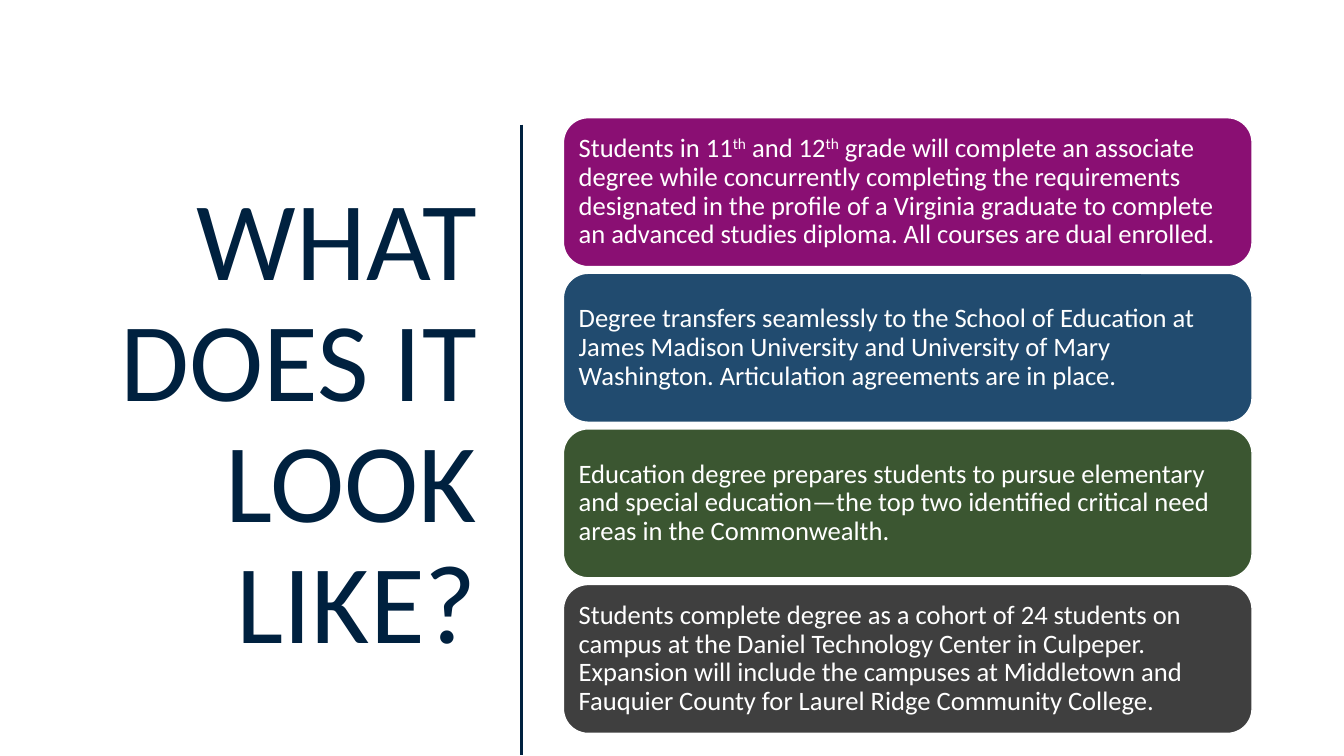
from dataclasses import dataclass

from lxml import etree
from pptx import Presentation
from pptx.dml.color import RGBColor
from pptx.enum.shapes import MSO_CONNECTOR, MSO_SHAPE
from pptx.enum.text import MSO_ANCHOR, PP_ALIGN
from pptx.oxml.ns import qn
from pptx.util import Inches, Pt

STRAIGHT = MSO_CONNECTOR.STRAIGHT
ROUNDED = MSO_SHAPE.ROUNDED_RECTANGLE
MIDDLE = MSO_ANCHOR.MIDDLE
LEFT, RIGHT = PP_ALIGN.LEFT, PP_ALIGN.RIGHT


@dataclass(frozen=True)
class Theme:
    font: str = "Calibri"
    title_size: float = 80
    card_size: float = 19
    line_spacing: float = 0.9
    navy: str = "00213F"
    white: str = "FFFFFF"
    plum: str = "8A0F73"
    blue: str = "214B6F"
    green: str = "3B5631"
    charcoal: str = "3F3F3F"


class SlideBuilder:
    """Draws on one slide; every position and length is a percentage of its size."""

    def __init__(self, presentation, theme):
        self.theme = theme
        self.width = presentation.slide_width
        self.height = presentation.slide_height
        self.slide = presentation.slides.add_slide(presentation.slide_layouts[6])

    def x(self, percent):
        return round(self.width * percent / 100)

    def y(self, percent):
        return round(self.height * percent / 100)

    def box(self, left, top, width, height):
        return self.x(left), self.y(top), self.x(width), self.y(height)

    def add_text(self, frame, runs, size, color, alignment):
        """Fill the frame with (text, is_superscript) runs in one paragraph."""
        frame.word_wrap = True
        frame.vertical_anchor = MIDDLE
        paragraph = frame.paragraphs[0]
        paragraph.alignment = alignment
        paragraph.line_spacing = self.theme.line_spacing
        for text, is_superscript in runs:
            run = paragraph.add_run()
            run.text = text
            run.font.name = self.theme.font
            run.font.size = Pt(size)
            run.font.color.rgb = RGBColor.from_string(color)
            if is_superscript:
                run.font._element.set("baseline", "30000")
        return paragraph

    def title(self, text, *place):
        shape = self.slide.shapes.add_textbox(*self.box(*place))
        self.add_text(shape.text_frame, [(text, False)], self.theme.title_size,
                      self.theme.navy, RIGHT)

    def vertical_rule(self, left, top, bottom):
        rule = self.slide.shapes.add_connector(
            STRAIGHT, self.x(left), self.y(top), self.x(left), self.y(bottom))
        rule.line.color.rgb = RGBColor.from_string(self.theme.navy)
        rule.line.width = Pt(2)
        etree.SubElement(rule._element.spPr, qn("a:effectLst"))

    def card(self, runs, color, *place):
        shape = self.slide.shapes.add_shape(ROUNDED, *self.box(*place))
        shape.shadow.inherit = False
        shape.fill.solid()
        shape.fill.fore_color.rgb = RGBColor.from_string(color)
        shape.line.color.rgb = RGBColor.from_string(self.theme.white)
        shape.line.width = Pt(1)
        frame = shape.text_frame
        frame.margin_left = frame.margin_right = Inches(0.08)
        frame.margin_top = frame.margin_bottom = Inches(0.08)
        size = self.theme.card_size
        paragraph = self.add_text(frame, runs, size, self.theme.white, LEFT)
        paragraph.space_after = Pt(size * 0.35)


def main():
    presentation = Presentation()
    presentation.slide_width = Inches(13.33)
    presentation.slide_height = Inches(7.5)
    theme = Theme()
    builder = SlideBuilder(presentation, theme)

    cards = [
        (theme.plum, [
            ("Students in 11", False), ("th", True),
            (" and 12", False), ("th", True),
            (" grade will complete an associate degree while concurrently "
             "completing the requirements designated in the profile of a "
             "Virginia graduate to complete an advanced studies diploma. "
             "All courses are dual enrolled.", False)]),
        (theme.blue, [
            ("Degree transfers seamlessly to the School of Education at James "
             "Madison University and University of Mary Washington. "
             "Articulation agreements are in place.", False)]),
        (theme.green, [
            ("Education degree prepares students to pursue elementary and "
             "special education—the top two identified critical need areas "
             "in the Commonwealth.", False)]),
        (theme.charcoal, [
            ("Students complete degree as a cohort of 24 students on campus at "
             "the Daniel Technology Center in Culpeper. Expansion will include "
             "the campuses at Middletown and Fauquier County for Laurel Ridge "
             "Community College.", False)]),
    ]
    content_top, card_height, card_pitch = 15.57, 19.7, 20.58

    builder.title("WHAT DOES IT LOOK LIKE?", 3.9, content_top, 32.33, 81.47)
    builder.vertical_rule(38.78, 16.5, 99.9)
    for row, (color, runs) in enumerate(cards):
        builder.card(runs, color, 41.92, content_top + row * card_pitch,
                     51.24, card_height)

    presentation.save("out.pptx")


if __name__ == "__main__":
    main()
